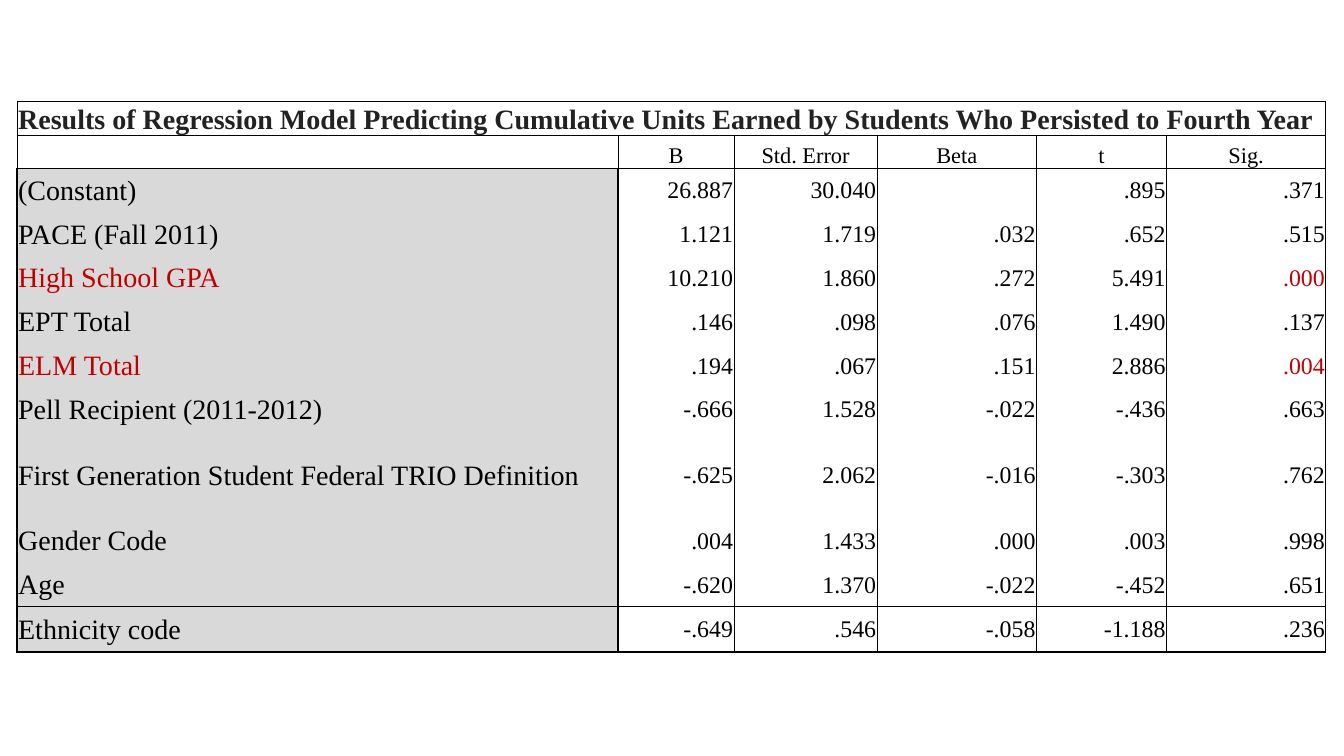
import pptx
import pptx.util
import pptx.dml.color
import pptx.enum.text
from lxml import etree

Inches = pptx.util.Inches
ALIGN = pptx.enum.text.PP_ALIGN
ANCHOR = pptx.enum.text.MSO_ANCHOR

HEADING = "Results of Regression Model Predicting Cumulative Units Earned by Students Who Persisted to Fourth Year"
STATISTICS = ["", "B", "Std. Error", "Beta", "t", "Sig."]
PREDICTORS = [
    ("(Constant)", "26.887", "30.040", "", ".895", ".371"),
    ("PACE (Fall 2011)", "1.121", "1.719", ".032", ".652", ".515"),
    ("High School GPA", "10.210", "1.860", ".272", "5.491", ".000"),
    ("EPT Total", ".146", ".098", ".076", "1.490", ".137"),
    ("ELM Total", ".194", ".067", ".151", "2.886", ".004"),
    ("Pell Recipient (2011-2012)", "-.666", "1.528", "-.022", "-.436", ".663"),
    ("First Generation Student Federal TRIO Definition", "-.625", "2.062", "-.016", "-.303", ".762"),
    ("Gender Code", ".004", "1.433", ".000", ".003", ".998"),
    ("Age", "-.620", "1.370", "-.022", "-.452", ".651"),
    ("Ethnicity code", "-.649", ".546", "-.058", "-1.188", ".236"),
]
SIGNIFICANT = {"High School GPA", "ELM Total"}
DOUBLE_HEIGHT = "First Generation Student Federal TRIO Definition"

BLACK, RED, GRAY, HEADING_INK = "000000", "C00000", "D9D9D9", "222222"
FONT = "Times New Roman"
THIN, THICK = 0.5, 1.5
LEFT, TOP = 0.17, 1.01
COLUMN_WIDTHS = [5.96, 1.15, 1.42, 1.58, 1.29, 1.58]
HEADER_HEIGHT, LAST_HEIGHT = 0.33, 0.45
PREDICTOR_HEIGHT = 4.35 / len(PREDICTORS)


def color(value):
    return pptx.dml.color.RGBColor.from_string(value)


def set_borders(cell, left, right, top, bottom):
    properties = cell._tc.get_or_add_tcPr()
    for side, width in zip("LRTB", (left, right, top, bottom)):
        line = etree.SubElement(properties, pptx.oxml.ns.qn(f"a:ln{side}"))
        if width:
            line.set("w", str(pptx.util.Pt(width)))
            fill = etree.SubElement(line, pptx.oxml.ns.qn("a:solidFill"))
            etree.SubElement(fill, pptx.oxml.ns.qn("a:srgbClr"), val=BLACK)
        else:
            etree.SubElement(line, pptx.oxml.ns.qn("a:noFill"))


def write_cell(cell, text, size, ink, align, anchor, bold=False):
    cell.margin_left = cell.margin_right = cell.margin_top = Inches(0.01)
    cell.margin_bottom = 0
    cell.vertical_anchor = anchor
    cell.text = text
    paragraph = cell.text_frame.paragraphs[0]
    paragraph.alignment = align
    font = paragraph.font
    font.name, font.size, font.bold = FONT, pptx.util.Pt(size), bold
    font.color.rgb = color(ink)


def main():
    deck = pptx.Presentation()
    deck.slide_width, deck.slide_height = Inches(13.33), Inches(7.5)
    slide = deck.slides.add_slide(deck.slide_layouts[6])

    heights = [HEADER_HEIGHT] * 2
    heights += [PREDICTOR_HEIGHT * (2 if row[0] == DOUBLE_HEIGHT else 1) for row in PREDICTORS[:-1]]
    heights.append(LAST_HEIGHT)
    regression = slide.shapes.add_table(
        len(heights), len(COLUMN_WIDTHS), Inches(LEFT), Inches(TOP),
        Inches(sum(COLUMN_WIDTHS)), Inches(sum(heights))).table
    regression.first_row = regression.horz_banding = False
    for column, width in zip(regression.columns, COLUMN_WIDTHS):
        column.width = Inches(width)
    for row, height in zip(regression.rows, heights):
        row.height = Inches(height)

    regression.cell(0, 0).merge(regression.cell(0, len(COLUMN_WIDTHS) - 1))
    write_cell(regression.cell(0, 0), HEADING, 20, HEADING_INK, ALIGN.LEFT, ANCHOR.BOTTOM, True)
    for c, statistic in enumerate(STATISTICS):
        write_cell(regression.cell(1, c), statistic, 16, BLACK, ALIGN.CENTER, ANCHOR.BOTTOM)
        for r in range(2):
            set_borders(regression.cell(r, c), THIN, THIN, THIN, THIN)
            regression.cell(r, c).fill.background()

    last = len(PREDICTORS) - 1
    for r, predictor in enumerate(PREDICTORS):
        top = THIN if r in (0, last) else 0
        bottom = {last - 1: THIN, last: THICK}.get(r, 0)
        for c, value in enumerate(predictor):
            cell = regression.cell(r + 2, c)
            is_label = c == 0
            highlighted = predictor[0] in SIGNIFICANT and STATISTICS[c] in ("", "Sig.")
            write_cell(cell, value, 20 if is_label else 17, RED if highlighted else BLACK,
                       ALIGN.LEFT if is_label else ALIGN.RIGHT, ANCHOR.MIDDLE)
            set_borders(cell, THICK if c < 2 else THIN, THICK if is_label else THIN, top, bottom)
            if is_label:
                cell.fill.solid()
                cell.fill.fore_color.rgb = color(GRAY)
            else:
                cell.fill.background()

    deck.save("out.pptx")


if __name__ == "__main__":
    main()
